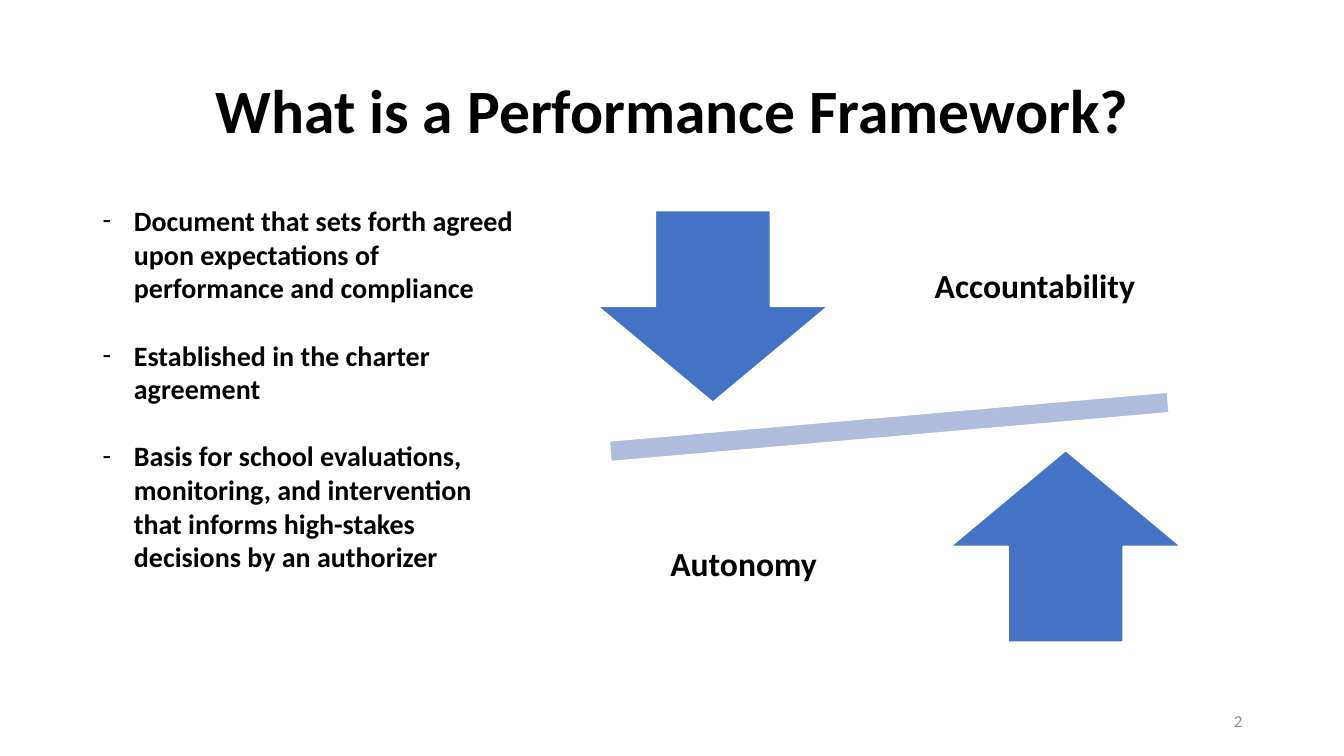
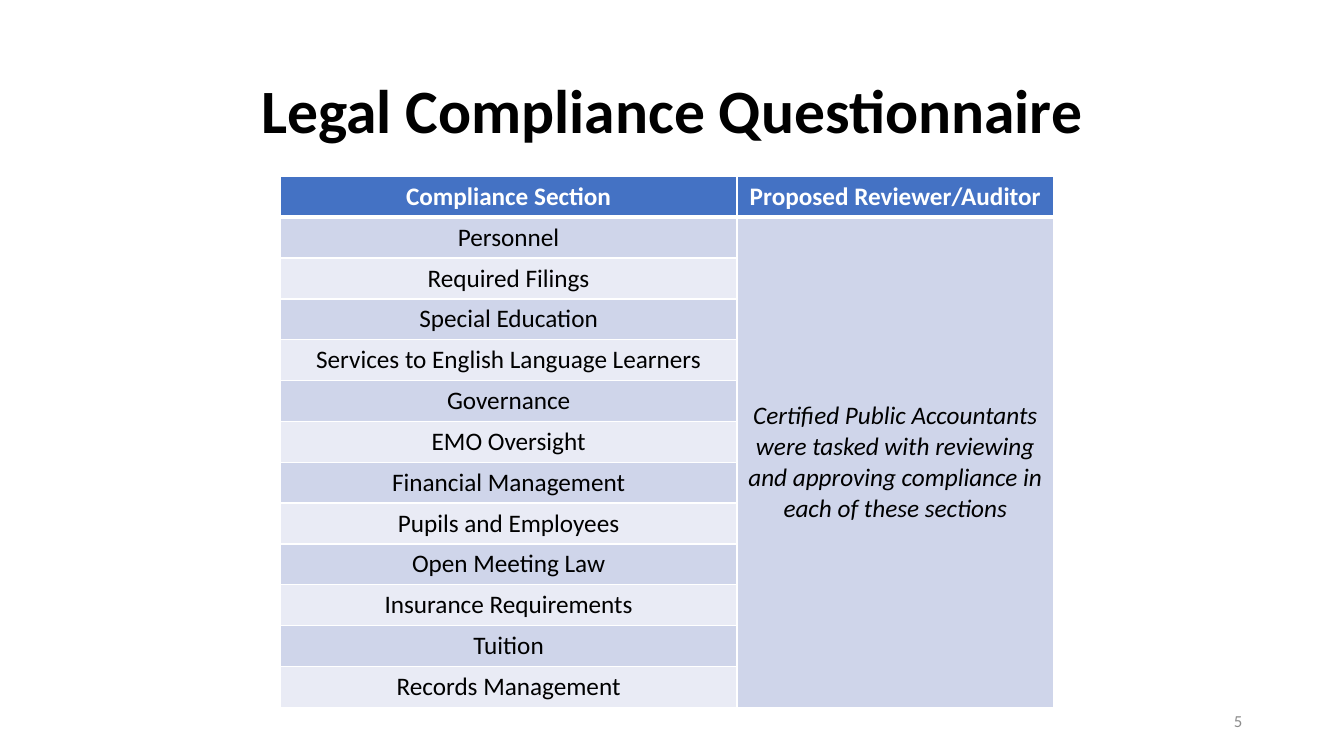
from dataclasses import dataclass

from lxml import etree
from pptx import Presentation
from pptx.dml.color import RGBColor
from pptx.enum.shapes import MSO_SHAPE
from pptx.enum.text import MSO_ANCHOR, PP_ALIGN
from pptx.oxml.ns import qn
from pptx.util import Inches, Pt

LEFT, CENTER, RIGHT = PP_ALIGN.LEFT, PP_ALIGN.CENTER, PP_ALIGN.RIGHT
TOP, MIDDLE = MSO_ANCHOR.TOP, MSO_ANCHOR.MIDDLE
DOWN_ARROW, UP_ARROW = MSO_SHAPE.DOWN_ARROW, MSO_SHAPE.UP_ARROW
BEAM = MSO_SHAPE.MATH_MINUS
BLANK_LAYOUT = 6


@dataclass(frozen=True)
class Theme:
    font: str = "Calibri"
    ink: str = "000000"
    paper: str = "FFFFFF"
    accent: str = "4472C4"
    beam: str = "B0BCDE"
    bands: tuple = ("CFD5EA", "E9EBF5")
    muted: str = "8C8C8C"
    title_size: int = 44
    label_size: int = 24
    bullet_size: int = 20
    table_size: int = 18
    footer_size: int = 12


class DeckBuilder:
    def __init__(self, theme):
        self.theme = theme
        self.deck = Presentation()
        self.deck.slide_width = Inches(13.33)
        self.deck.slide_height = Inches(7.5)
        self.page = None

    def new_page(self, title, number):
        theme = self.theme
        self.page = self.deck.slides.add_slide(self.deck.slide_layouts[BLANK_LAYOUT])
        self.text(title, (0.92, 0.4, 11.5, 1.45), theme.title_size,
                  bold=True, line_spacing=0.9)
        self.text(str(number), (9.42, 6.95, 3, 0.4), theme.footer_size,
                  color=theme.muted, align=RIGHT)

    def style(self, para, size, color=None, bold=False, italic=False, align=CENTER):
        para.alignment = align
        font = para.font
        font.name, font.size = self.theme.font, Pt(size)
        font.bold, font.italic = bold, italic
        font.color.rgb = RGBColor.from_string(color or self.theme.ink)

    def frame(self, bounds, anchor):
        """Add an empty wrapping text box and return its text frame."""
        box = self.page.shapes.add_textbox(*map(Inches, bounds))
        frame = box.text_frame
        frame.word_wrap = True
        frame.vertical_anchor = anchor
        return frame

    def text(self, words, bounds, size, line_spacing=1.0, **style):
        para = self.frame(bounds, MIDDLE).paragraphs[0]
        para.text = words
        para.line_spacing = line_spacing
        self.style(para, size, **style)

    def label(self, words, left, top):
        self.text(words, (left, top, 2.43, 2), self.theme.label_size,
                  bold=True, line_spacing=0.9)

    def bullets(self, items, bounds):
        frame = self.frame(bounds, TOP)
        indent = Inches(0.31)
        for index, item in enumerate(items):
            para = frame.paragraphs[0] if index == 0 else frame.add_paragraph()
            para.text = item
            self.style(para, self.theme.bullet_size, bold=True, align=LEFT)
            para.space_before = Pt(24 if index else 0)
            properties = para._p.get_or_add_pPr()
            properties.set("marL", str(indent))
            properties.set("indent", str(-indent))
            etree.SubElement(properties, qn("a:buFont"), typeface=self.theme.font)
            etree.SubElement(properties, qn("a:buChar"), char="-")

    def shape(self, kind, bounds, fill, rotation=0):
        shape = self.page.shapes.add_shape(kind, *map(Inches, bounds))
        shape.shadow.inherit = False
        shape.rotation = rotation
        shape.fill.solid()
        shape.fill.fore_color.rgb = RGBColor.from_string(fill)
        shape.line.color.rgb = RGBColor.from_string(self.theme.paper)
        shape.line.width = Pt(1)

    def arrow(self, kind, left, top):
        self.shape(kind, (left, top, 2.28, 1.9), self.theme.accent)

    def borders(self, cell, top, bottom):
        """Rule all four sides of a cell, with widths in points."""
        properties = cell._tc.get_or_add_tcPr()
        for side, width in (("L", 1), ("R", 1), ("T", top), ("B", bottom)):
            line = etree.SubElement(properties, qn(f"a:ln{side}"), w=str(Pt(width)))
            fill = etree.SubElement(line, qn("a:solidFill"))
            etree.SubElement(fill, qn("a:srgbClr"), val=self.theme.paper)

    def cell(self, cell, row, words, **style):
        theme = self.theme
        header = row == 0
        self.borders(cell, top=3 if row == 1 else 1, bottom=3 if header else 1)
        cell.fill.solid()
        color = theme.accent if header else theme.bands[(row - 1) % 2]
        cell.fill.fore_color.rgb = RGBColor.from_string(color)
        para = cell.text_frame.paragraphs[0]
        para.text = words
        self.style(para, theme.table_size, bold=header,
                   color=theme.paper if header else theme.ink, **style)

    def review_table(self, headers, sections, reviewer, bounds, widths):
        """List sections beside one reviewer cell that spans them all."""
        table = self.page.shapes.add_table(
            len(sections) + 1, len(headers), *map(Inches, bounds)).table
        for column, width in zip(table.columns, widths):
            column.width = Inches(width)
        for column, header in enumerate(headers):
            self.cell(table.cell(0, column), 0, header)
        for row, section in enumerate(sections, start=1):
            self.cell(table.cell(row, 0), row, section)
        span = table.cell(1, 1)
        span.merge(table.cell(len(sections), 1))
        self.cell(span, 1, reviewer, italic=True)
        span.vertical_anchor = MIDDLE


def framework_page(builder):
    builder.new_page("What is a Performance Framework?", 2)
    builder.shape(BEAM, (5.04, 3.8, 7.56, 0.87), builder.theme.beam, rotation=355)
    builder.arrow(DOWN_ARROW, 5.93, 2.09)
    builder.label("Accountability", 9.05, 1.85)
    builder.arrow(UP_ARROW, 9.43, 4.47)
    builder.label("Autonomy", 6.16, 4.61)
    builder.bullets([
        "Document that sets forth agreed upon expectations of performance and compliance",
        "Established in the charter agreement",
        "Basis for school evaluations, monitoring, and intervention that informs "
        "high-stakes decisions by an authorizer",
    ], (0.92, 1.97, 4.37, 4.11))


def questionnaire_page(builder):
    builder.new_page("Legal Compliance Questionnaire", 5)
    builder.review_table(
        headers=["Compliance Section", "Proposed Reviewer/Auditor"],
        sections=[
            "Personnel", "Required Filings", "Special Education",
            "Services to English Language Learners", "Governance", "EMO Oversight",
            "Financial Management", "Pupils and Employees", "Open Meeting Law",
            "Insurance Requirements", "Tuition", "Records Management",
        ],
        reviewer="Certified Public Accountants were tasked with reviewing and "
                 "approving compliance in each of these sections",
        bounds=(2.78, 1.75, 7.67, 5.27),
        widths=(4.53, 3.14),
    )


def main():
    builder = DeckBuilder(Theme())
    framework_page(builder)
    questionnaire_page(builder)
    builder.deck.save("out.pptx")


if __name__ == "__main__":
    main()
